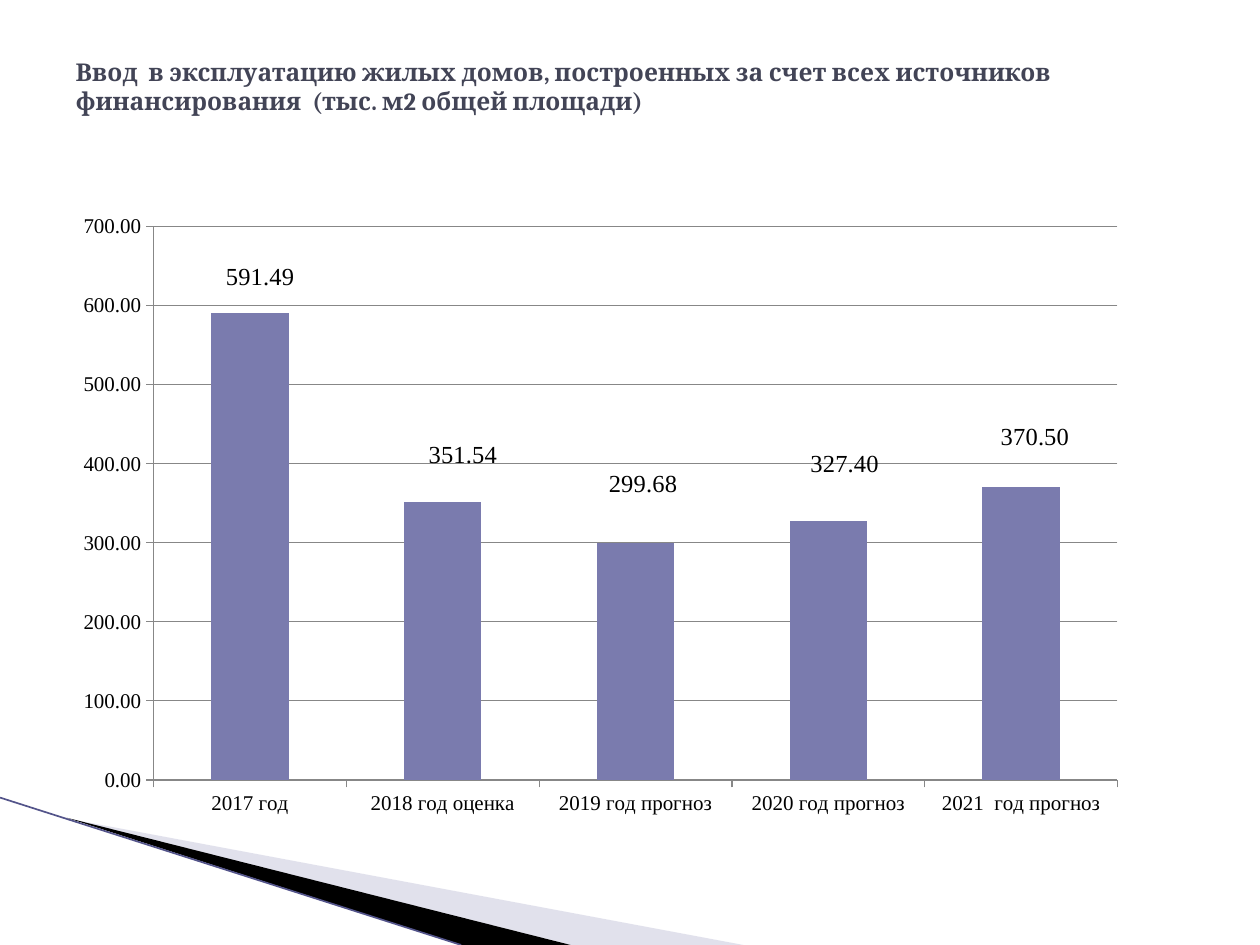
from lxml.etree import SubElement
from pptx import Presentation
from pptx.chart.data import CategoryChartData
from pptx.dml.color import RGBColor
from pptx.enum.chart import XL_CHART_TYPE, XL_LABEL_POSITION, XL_TICK_MARK
from pptx.enum.shapes import MSO_CONNECTOR
from pptx.enum.text import MSO_ANCHOR, PP_ALIGN
from pptx.oxml import parse_xml
from pptx.oxml.ns import nsdecls, qn
from pptx.util import Inches, Pt

WIDTH, HEIGHT = 10, 7.5
COLORS = {"title": "424456", "bar": "7A7BAE", "text": "000000", "grid": "878787",
          "pale": "B6B6D1", "dark": "000000", "edge": "53548A"}
TITLE = ("Ввод  в эксплуатацию жилых домов, построенных за счет всех источников "
         "финансирования  (тыс. м2 общей площади)")
# Category, value, label shift from the bar centre in inches
HOUSING = [
    ("2017 год", 591.49, 0.08, -2.14),
    ("2018 год оценка", 351.54, 0.16, -1.48),
    ("2019 год прогноз", 299.68, 0.06, -1.41),
    ("2020 год прогноз", 327.4, 0.13, -1.48),
    ("2021  год прогноз", 370.5, 0.11, -1.56),
]
# Inches; the plot area is measured from the corner of the chart
CHART_LEFT, CHART_TOP, CHART_WIDTH, CHART_HEIGHT = 0.5, 1.62, 8.55, 4.95
PLOT_AREA = {"x": 0.72, "y": 0.18, "w": 7.65, "h": 4.39}
NUMBER_FORMAT = "#,##0.00"


def color(name):
    return RGBColor.from_string(COLORS[name])


def set_font(font, size, name, color_name):
    font.size, font.name = Pt(size), name
    font.color.rgb = color(color_name)


def layout_xml(lengths, inner=False):
    """Return a manual chart layout; inner measures the plot without its axis labels."""
    modes = '<c:layoutTarget val="inner"/><c:xMode val="edge"/><c:yMode val="edge"/>' if inner else ""
    places = "".join(
        f'<c:{key} val="{length / (CHART_WIDTH if key in "xw" else CHART_HEIGHT):.4f}"/>'
        for key, length in lengths.items())
    return parse_xml(f'<c:layout {nsdecls("c")}><c:manualLayout>{modes}{places}'
                     '</c:manualLayout></c:layout>')


def add_wedge(page, points, fill, opacity=100):
    builder = page.shapes.build_freeform(*map(Inches, points[0]), scale=1.0)
    builder.add_line_segments([(Inches(x), Inches(y)) for x, y in points[1:]])
    wedge = builder.convert_to_shape()
    wedge.shadow.inherit = False
    wedge.line.fill.background()
    wedge.fill.solid()
    wedge.fill.fore_color.rgb = color(fill)
    if opacity < 100:
        tint = wedge._element.spPr.find(f'.//{qn("a:srgbClr")}')
        SubElement(tint, qn("a:alpha"), val=str(opacity * 1000))


def add_edge(page, start, end):
    edge = page.shapes.add_connector(MSO_CONNECTOR.STRAIGHT, *map(Inches, start + end))
    edge.line.width = Pt(0.95)
    edge.line.color.rgb = color("edge")
    SubElement(edge._element.spPr, qn("a:effectLst"))


def add_corner(page):
    add_wedge(page, [(0.55, 6.5), (5.9, HEIGHT), (4.53, HEIGHT)], "pale", 40)
    add_wedge(page, [(0.53, 6.49), (4.53, HEIGHT), (3.66, HEIGHT)], "dark")
    add_edge(page, (0, 6.33), (3.66, HEIGHT))


def format_title(title):
    title.left, title.top = Inches(0.5), Inches(0.3)
    title.width, title.height = Inches(WIDTH - 1), Inches(0.77)
    title.text_frame.text = TITLE
    title.text_frame.word_wrap = True
    title.text_frame.vertical_anchor = MSO_ANCHOR.MIDDLE
    para = title.text_frame.paragraphs[0]
    para.alignment = PP_ALIGN.LEFT
    para.font.bold = True
    set_font(para.font, 14, "Cambria", "title")


def format_axis(axis):
    axis.major_tick_mark = XL_TICK_MARK.OUTSIDE
    axis.format.line.color.rgb = color("grid")
    set_font(axis.tick_labels.font, 12, "Times New Roman", "text")


def format_labels(series):
    """Lift each value above its bar, without leader lines."""
    labels = series.data_labels
    labels.show_value = True
    labels.number_format, labels.number_format_is_linked = NUMBER_FORMAT, False
    set_font(labels.font, 14, "Times New Roman", "text")
    for index in range(len(HOUSING)):
        label = series.points[index].data_label
        label.position = XL_LABEL_POSITION.CENTER
        set_font(label.font, 14, "Times New Roman", "text")
    shifts = [{"x": x, "y": y} for _, _, x, y in HOUSING]
    for label, shift in zip(series._element.iter(qn("c:dLbl")), shifts):
        label.insert(1, layout_xml(shift))
    for leader in series._element.iter(qn("c:showLeaderLines")):
        leader.set("val", "0")


def add_housing_chart(page):
    data = CategoryChartData(number_format=NUMBER_FORMAT)
    data.categories = [row[0] for row in HOUSING]
    data.add_series("Series 1", [row[1] for row in HOUSING])
    frame = map(Inches, (CHART_LEFT, CHART_TOP, CHART_WIDTH, CHART_HEIGHT))
    chart = page.shapes.add_chart(XL_CHART_TYPE.COLUMN_STACKED, *frame, data).chart
    chart.has_legend = chart.has_title = False
    set_font(chart.font, 18, "Noto Sans Mono", "text")
    plot = chart.plots[0]
    plot.gap_width, plot.overlap, plot.vary_by_categories = 150, 100, False
    series = plot.series[0]
    series.format.fill.solid()
    series.format.fill.fore_color.rgb = color("bar")
    format_labels(series)

    values = chart.value_axis
    format_axis(chart.category_axis)
    format_axis(values)
    values.minimum_scale, values.maximum_scale, values.major_unit = 0, 700, 100
    values.has_major_gridlines = True
    values.major_gridlines.format.line.color.rgb = color("grid")
    values.tick_labels.number_format = NUMBER_FORMAT
    values.tick_labels.number_format_is_linked = False

    area = chart._chartSpace.find(f'.//{qn("c:plotArea")}')
    for layout in area.findall(qn("c:layout")):
        area.remove(layout)
    area.insert(0, layout_xml(PLOT_AREA, inner=True))


def main():
    deck = Presentation()
    deck.slide_width, deck.slide_height = Inches(WIDTH), Inches(HEIGHT)
    page = deck.slides.add_slide(deck.slide_layouts.get_by_name("Title Only"))
    add_corner(page)
    add_housing_chart(page)
    format_title(page.shapes.title)
    deck.save("out.pptx")


if __name__ == "__main__":
    main()
